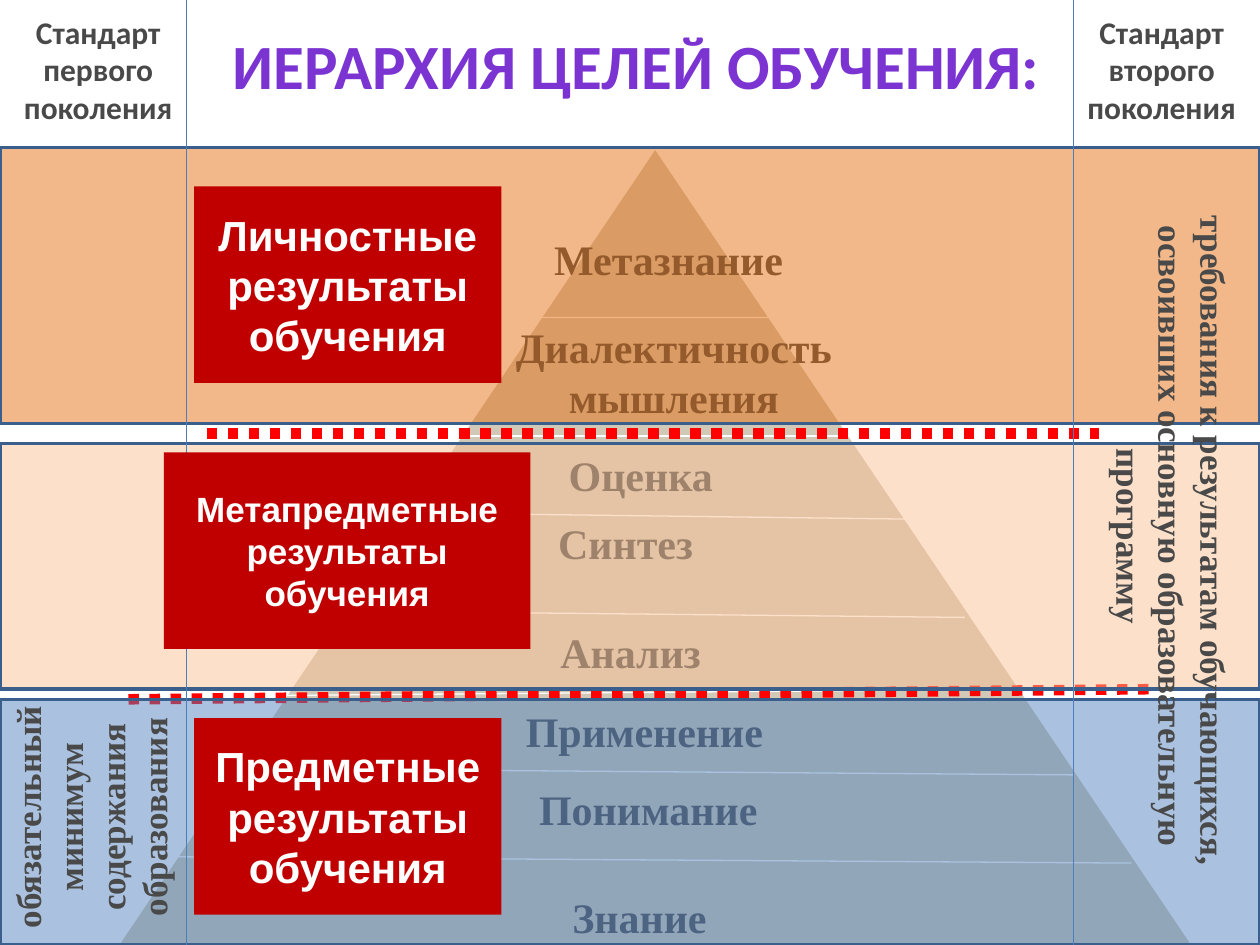
from lxml.etree import SubElement
from pptx import Presentation
from pptx.dml.color import RGBColor
from pptx.enum.dml import MSO_LINE_DASH_STYLE as Dash
from pptx.enum.shapes import MSO_CONNECTOR_TYPE as Link, MSO_SHAPE as Shape
from pptx.enum.text import MSO_ANCHOR as Anchor, MSO_AUTO_SIZE as Fit, PP_ALIGN as Align
from pptx.oxml.ns import qn
from pptx.util import Inches, Pt

SERIF, SANS, HEAD = "Times New Roman", "Arial", "Calibri"
WHITE, RED, GREY, DARK_GREY = "FFFFFF", "FF0000", "494949", "4B4B4B"
PURPLE, CRIMSON, NAVY, BLUE, SAND = "7B34D2", "C00000", "3A5F8C", "4B7EBC", "D1C9B7"


def color(value):
    return RGBColor.from_string(value)


class Painter:
    def __init__(self, page):
        self.page = page
        self.shapes = page.shapes

    def fill_text(self, box, lines, size, font, ink, anchor=Anchor.TOP, wrap=True, align=Align.CENTER):
        frame = box.text_frame
        frame.auto_size = Fit.NONE
        frame.word_wrap = wrap
        frame.vertical_anchor = anchor
        for number, line in enumerate(lines):
            para = frame.add_paragraph() if number else frame.paragraphs[0]
            para.alignment = align
            span = para.add_run()
            span.text = line
            span.font.size = Pt(size)
            span.font.name = font
            span.font.bold = True
            span.font.color.rgb = color(ink)

    def title(self, place, text, size, font, ink):
        box = self.shapes.title
        box.left, box.top, box.width, box.height = map(Inches, place)
        self.fill_text(box, [text], size, font, ink)

    def text(self, place, lines, size, font, ink, turn=0, **layout):
        box = self.shapes.add_textbox(*map(Inches, place))
        box.rotation = turn
        self.fill_text(box, lines, size, font, ink, **layout)

    def shape(self, kind, place, fill, line=None, weight=0.75, alpha=None):
        shape = self.shapes.add_shape(kind, *map(Inches, place))
        shape.shadow.inherit = False
        shape.fill.solid()
        shape.fill.fore_color.rgb = color(fill)
        if alpha is not None:
            tint = shape._element.spPr.find(qn("a:solidFill"))[0]
            SubElement(tint, qn("a:alpha"), val=str(alpha * 1000))
        if line:
            shape.line.color.rgb = color(line)
            shape.line.width = Pt(weight)
        else:
            shape.line.fill.background()
        return shape

    def card(self, place, text, size):
        card = self.shape(Shape.RECTANGLE, place, CRIMSON)
        self.fill_text(card, [text], size, SANS, WHITE, anchor=Anchor.MIDDLE)

    def line(self, start, end, ink, weight=0.75, dash=None):
        line = self.shapes.add_connector(Link.STRAIGHT, *map(Inches, start + end))
        line.line.color.rgb = color(ink)
        line.line.width = Pt(weight)
        if dash:
            line.line.dash_style = dash
        SubElement(line._element.spPr, qn("a:effectLst"))


def draw_pyramid(painter):
    painter.shape(Shape.ISOSCELES_TRIANGLE, (0.94, 1.18, 8.52, 6.32), SAND, WHITE)
    dividers = [
        (4.29, 2.52, 6.1, 2.52),
        (3.67, 3.46, 6.74, 3.46),
        (3.2, 4.07, 7.19, 4.12),
        (2.81, 4.85, 7.66, 4.9),
        (2.19, 5.52, 8.21, 5.47),
        (1.95, 6.1, 8.52, 6.15),
        (1.41, 6.8, 8.98, 6.85),
    ]
    for divider in dividers:
        painter.line(divider[:2], divider[2:], WHITE)

    levels = [
        ("Оценка", 4.14, 3.52, 1.89),
        ("Синтез", 3.75, 4.06, 2.43),
        ("Анализ", 3.52, 4.92, 2.97),
        ("Применение", 3.36, 5.55, 3.51),
        ("Понимание", 3.12, 6.17, 4.05),
        ("Знание", 3.05, 7.03, 4.05),
    ]
    for name, left, top, width in levels:
        painter.text((left, top, width, 0.47), [name], 24, SERIF, DARK_GREY)
    painter.text((4.3, 1.8, 2.04, 0.51), ["Метазнание"], 24, SERIF, DARK_GREY,
                 wrap=False, align=Align.LEFT)
    painter.text((3.98, 2.5, 2.82, 0.91), ["Диалектичность ", "мышления "], 24, SERIF, DARK_GREY,
                 wrap=False)


def draw_bands(painter):
    painter.line((1.64, 3.44), (8.72, 3.44), RED, 6, Dash.ROUND_DOT)
    painter.line((1.02, 5.55), (9.14, 5.47), RED, 6, Dash.ROUND_DOT)
    for top, height, fill in [(5.55, 1.95, "4F81BD"), (3.52, 1.95, "FAC090"), (1.17, 2.19, "E46C0A")]:
        painter.shape(Shape.RECTANGLE, (0, top, 10, height), fill, NAVY, 2, alpha=48)


def draw_standards(painter):
    for left, border, name in [(0, 1.48, "первого"), (8.44, 8.52, "второго")]:
        painter.text((left, 0.16, 1.56, 0.78), [f"Стандарт {name} поколения"], 18, HEAD, GREY,
                     anchor=Anchor.MIDDLE)
        painter.line((border, 0), (border, 7.5), BLUE)


def draw_results(painter):
    painter.card((1.54, 5.7, 2.44, 1.56), "Предметные результаты обучения", 24)
    painter.card((1.3, 3.59, 2.91, 1.56), "Метапредметные результаты обучения", 20)
    painter.card((1.54, 1.48, 2.44, 1.56), "Личностные результаты обучения", 24)


def draw_side_notes(painter):
    painter.text((-0.29, 5.76, 2.03, 1.45), ["обязательный минимум содержания образования"],
                 20, SERIF, GREY, turn=270)
    painter.text((6.22, 3.7, 6.17, 1.11),
                 [" требования к результатам обучающихся, освоивших основную образовательную программу"],
                 20, SERIF, GREY, turn=90, anchor=Anchor.MIDDLE)


def main():
    deck = Presentation()
    deck.slide_width, deck.slide_height = Inches(10), Inches(7.5)
    painter = Painter(deck.slides.add_slide(deck.slide_layouts[5]))
    painter.title((1.56, 0.16, 6.98, 0.71), "ИЕРАРХИЯ ЦЕЛЕЙ ОБУЧЕНИЯ:", 36, HEAD, PURPLE)
    draw_pyramid(painter)
    draw_bands(painter)
    draw_standards(painter)
    draw_results(painter)
    draw_side_notes(painter)
    deck.save("out.pptx")


if __name__ == "__main__":
    main()
